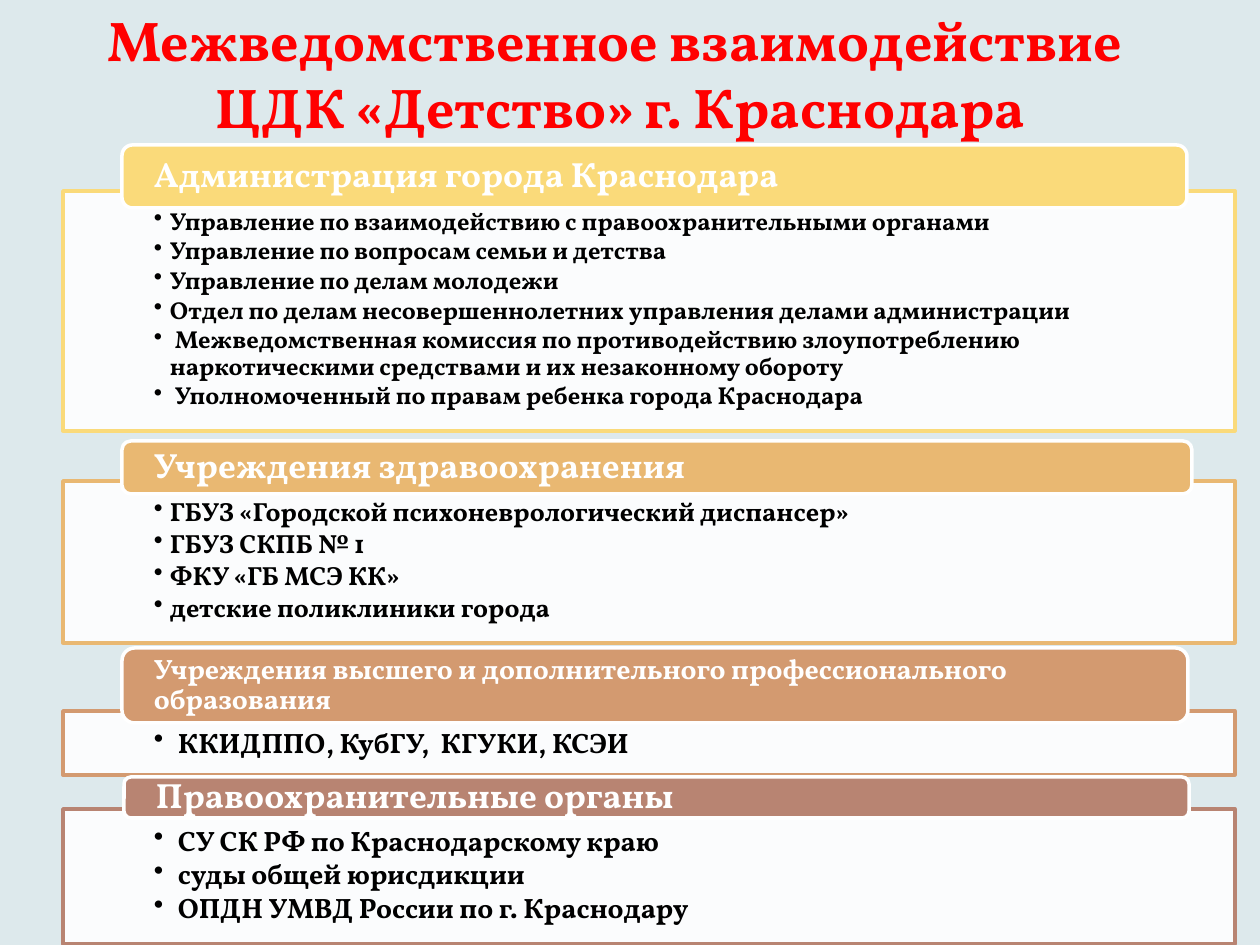
"""Build a slide of four titled panels listing partner organisations."""
import dataclasses
import typing

import pptx
import pptx.dml.color
import pptx.enum.shapes
import pptx.enum.text
import pptx.oxml.ns
import pptx.oxml.xmlchemy
import pptx.util
import lxml.etree

SHAPES = pptx.enum.shapes.MSO_SHAPE
ANCHORS = pptx.enum.text.MSO_ANCHOR
ALIGNS = pptx.enum.text.PP_ALIGN
PX_PER_INCH = 126
PANEL_LEFT, PANEL_WIDTH = 63, 1172


@dataclasses.dataclass(frozen=True)
class Theme:
    font: str = "Vollkorn"
    background: str = "DDE9EC"
    title: str = "FF0000"
    white: str = "FFFFFF"
    text: str = "000000"
    title_size: int = 32
    outline: int = 2
    panel_opacity: int = 90


@dataclasses.dataclass(frozen=True)
class Box:
    left: int
    top: int
    width: int
    height: int


@dataclasses.dataclass(frozen=True)
class Section:
    color: str
    heading: str
    heading_size: int
    header: Box
    panel_top: int
    panel_height: int
    item_size: int
    indent: int
    items: tuple[str, ...]


THEME = Theme()
TITLE = "Межведомственное взаимодействие \vЦДК «Детство» г. Краснодара"
SECTIONS = (
    Section("FADA7A", "Администрация города Краснодара", 20,
            Box(122, 145, 1065, 63), 191, 240, 14, 16, (
                "Управление по взаимодействию с правоохранительными органами",
                "Управление по вопросам семьи и детства",
                "Управление по делам молодежи",
                "Отдел по делам несовершеннолетних управления делами администрации",
                " Межведомственная комиссия по противодействию злоупотреблению "
                "наркотическими средствами и их незаконному обороту",
                " Уполномоченный по правам ребенка города Краснодара")),
    Section("E9B872", "Учреждения здравоохранения", 20,
            Box(122, 441, 1070, 53), 481, 162, 15, 16, (
                "ГБУЗ «Городской психоневрологический диспансер»",
                "ГБУЗ СКПБ № 1",
                "ФКУ «ГБ МСЭ КК»",
                "детские поликлиники города")),
    Section("D39A70", "Учреждения высшего и дополнительного профессионального образования", 16,
            Box(122, 648, 1066, 75), 711, 64, 16, 24, (
                "ККИДППО, КубГУ,  КГУКИ, КСЭИ",)),
    Section("B88472", "Правоохранительные органы", 20,
            Box(124, 777, 1065, 41), 809, 135, 16, 24, (
                "СУ СК РФ по Краснодарскому краю",
                "суды общей юрисдикции",
                "ОПДН УМВД России по г. Краснодару")),
)


def px(length: float) -> pptx.util.Emu:
    """Turn pixels into EMU."""
    return pptx.util.Emu(round(length * 914400 / PX_PER_INCH))


def rgb(value: str) -> pptx.dml.color.RGBColor:
    """Turn a hex string into a colour."""
    return pptx.dml.color.RGBColor.from_string(value)


def apply(target: typing.Any, values: dict[str, typing.Any]) -> None:
    """Set each named attribute on the target."""
    for name, value in values.items():
        setattr(target, name, value)


def place(box: Box) -> tuple[pptx.util.Emu, ...]:
    """Give the box as EMU arguments."""
    return tuple(px(length) for length in dataclasses.astuple(box))


def set_frame(shape: typing.Any, anchor: typing.Any, side: float, top: int, bottom: int) -> None:
    """Set wrapping, anchor and insets of the shape's text."""
    apply(shape.text_frame, {
        "word_wrap": True, "vertical_anchor": anchor,
        "margin_left": px(side), "margin_right": px(side),
        "margin_top": px(top), "margin_bottom": px(bottom)})


def write(para: typing.Any, text: str, size: int, color: str, **layout: typing.Any) -> None:
    """Fill the paragraph with bold text in the theme font."""
    para.text = text
    apply(para, layout)
    for span in para.runs:
        apply(span.font, {"name": THEME.font, "size": pptx.util.Pt(size), "bold": True})
        span.font.color.rgb = rgb(color)


def add_block(page: typing.Any, kind: typing.Any, box: Box, fill: str, line: str) -> typing.Any:
    """Add a filled and outlined shape without shadow."""
    shape = page.shapes.add_shape(kind, *place(box))
    shape.shadow.inherit = False
    shape.fill.solid()
    shape.fill.fore_color.rgb = rgb(fill)
    shape.line.color.rgb = rgb(line)
    shape.line.width = pptx.util.Pt(THEME.outline)
    return shape


def set_opacity(shape: typing.Any, percent: int) -> None:
    """Make the solid fill partly transparent."""
    qn = pptx.oxml.ns.qn
    color = shape.fill._xPr.find(qn("a:solidFill")).find(qn("a:srgbClr"))
    lxml.etree.SubElement(color, qn("a:alpha")).set("val", str(percent * 1000))


def add_bullet(para: typing.Any, indent: int) -> None:
    """Give the paragraph a hanging bullet."""
    properties = para._p.get_or_add_pPr()
    properties.set("marL", str(px(indent)))
    properties.set("indent", str(-px(indent)))
    lxml.etree.SubElement(properties, pptx.oxml.ns.qn("a:buChar")).set("char", "•")


def add_section(page: typing.Any, section: Section) -> None:
    """Draw the bulleted panel and the header that overlaps it."""
    panel_box = Box(PANEL_LEFT, section.panel_top, PANEL_WIDTH, section.panel_height)
    panel = add_block(page, SHAPES.RECTANGLE, panel_box, THEME.white, section.color)
    set_opacity(panel, THEME.panel_opacity)
    set_frame(panel, ANCHORS.TOP, 91, 18, 14)
    for index, item in enumerate(section.items):
        frame = panel.text_frame
        para = frame.add_paragraph() if index else frame.paragraphs[0]
        write(para, item, section.item_size, THEME.text, level=1, line_spacing=0.9,
              space_after=pptx.util.Pt(section.item_size * 0.13), alignment=ALIGNS.LEFT)
        add_bullet(para, section.indent)

    header = add_block(page, SHAPES.ROUNDED_RECTANGLE, section.header, section.color, THEME.white)
    set_frame(header, ANCHORS.MIDDLE, 32 - 0.05 * section.header.height, 0, 0)
    write(header.text_frame.paragraphs[0], section.heading, section.heading_size, THEME.white,
          line_spacing=0.9, alignment=ALIGNS.LEFT)


def add_title(page: typing.Any) -> None:
    """Write the centred two-line title."""
    title = page.shapes.add_textbox(*place(Box(54, 0, 1134, 145)))
    set_frame(title, ANCHORS.MIDDLE, 13, 6, 6)
    write(title.text_frame.paragraphs[0], TITLE, THEME.title_size, THEME.title,
          alignment=ALIGNS.CENTER)


def main() -> None:
    """Build and save the deck."""
    deck = pptx.Presentation()
    apply(deck, {"slide_width": px(1260), "slide_height": px(945)})
    page = deck.slides.add_slide(deck.slide_layouts[6])
    page.background.fill.solid()
    page.background.fill.fore_color.rgb = rgb(THEME.background)
    add_title(page)
    for section in SECTIONS:
        add_section(page, section)
    deck.save("out.pptx")


if __name__ == "__main__":
    main()
